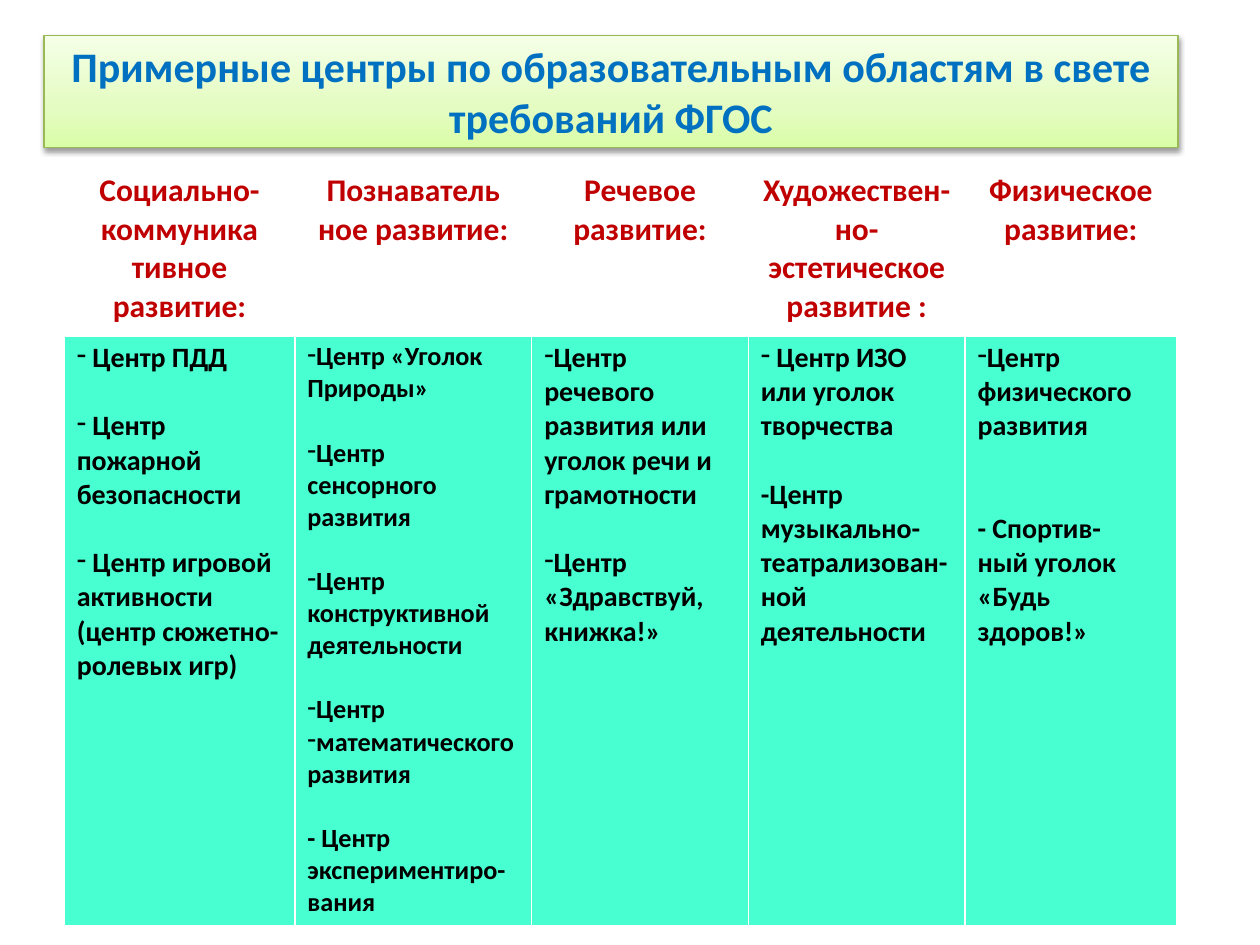
"""Build a slide listing activity centres for five educational areas."""

import dataclasses
from typing import Any

import lxml.etree
import pptx
import pptx.dml.color
import pptx.enum.shapes
import pptx.enum.text
import pptx.oxml.ns
import pptx.util

COLOURS = {
    "title": "0070C0",
    "heading": "C00000",
    "body": "000000",
    "cell": "47FFD1",
    "rule": "FFFFFF",
    "banner_line": "98B955",
    "shadow": "000000",
}
BANNER_STOPS = ((0, "DAFDA7"), (35, "E4FCC2"), (100, "F5FFE7"))
TITLE = "Примерные центры по образовательным областям в свете требований ФГОС"
FONT = "Calibri"
LINE_HEIGHT = 1.22
HEADING_SIZE = 18
ROW_HEIGHTS = (96.5, 336)


@dataclasses.dataclass(frozen=True)
class Item:
    text: str
    lines_before: int = 0
    dash: bool = True


@dataclasses.dataclass(frozen=True)
class Area:
    width: float
    heading: tuple[str, ...]
    items: tuple[Item, ...]
    size: int = 16


AREAS = (
    Area(131.76, ("Социально-коммуника", "тивное развитие:"), (
        Item(" Центр ПДД"),
        Item(" Центр пожарной безопасности", 1),
        Item(" Центр игровой активности (центр сюжетно-ролевых игр)", 1),
    )),
    Area(135.36, ("Познаватель", "ное развитие:"), (
        Item("Центр «Уголок Природы»"),
        Item("Центр сенсорного развития", 1),
        Item("Центр конструктивной деятельности", 1),
        Item("Центр", 1),
        Item("математического развития"),
        Item("- Центр экспериментиро-вания", 1, False),
    ), 15),
    Area(123.84, ("Речевое развитие:",), (
        Item("Центр речевого развития или уголок речи и грамотности"),
        Item("Центр «Здравствуй, книжка!»", 1),
    )),
    Area(123.84, ("Художествен-но-эстетическое развитие :",), (
        Item(" Центр ИЗО или уголок творчества"),
        Item("-Центр музыкально-театрализован-ной деятельности", 1, False),
    )),
    Area(120.96, ("Физическое развитие:",), (
        Item("Центр физического развития"),
        Item("- Спортив-", 2, False),
        Item("ный уголок «Будь здоров!»", 0, False),
    )),
)


def apply_format(target: Any, values: dict[str, Any]) -> None:
    """Set every named attribute on the target."""
    for name, value in values.items():
        setattr(target, name, value)


def rgb(name: str) -> pptx.dml.color.RGBColor:
    """Return a palette colour."""
    return pptx.dml.color.RGBColor.from_string(COLOURS[name])


def add_node(parent: Any, tag: str, **attributes: Any) -> Any:
    """Append a DrawingML element."""
    values = {key: str(value) for key, value in attributes.items()}
    return lxml.etree.SubElement(parent, pptx.oxml.ns.qn(f"a:{tag}"), values)


def write_items(frame: Any, items: tuple[Item, ...], size: int, colour: str,
                centred: bool = False) -> None:
    """Write one bold paragraph for each item."""
    for index, item in enumerate(items):
        para = frame.add_paragraph() if index else frame.paragraphs[0]
        align = pptx.enum.text.PP_ALIGN
        gap = item.lines_before * size * LINE_HEIGHT
        apply_format(para, {
            "alignment": align.CENTER if centred else align.LEFT,
            "space_before": pptx.util.Pt(gap),
        })
        if item.dash:
            properties = para._p.get_or_add_pPr()
            properties.set("marL", "0")
            properties.set("indent", "0")
            add_node(properties, "buFontTx")
            add_node(properties, "buChar", char="-")
        span = para.add_run()
        span.text = item.text
        apply_format(span.font, {"name": FONT, "size": pptx.util.Pt(size), "bold": True})
        span.font.color.rgb = rgb(colour)


def draw_banner(page: Any) -> None:
    """Draw the title on a gradient box with a soft shadow."""
    box = page.shapes.add_shape(
        pptx.enum.shapes.MSO_SHAPE.RECTANGLE,
        *(pptx.util.Pt(length) for length in (25.2, 20.16, 648, 64.08)))
    box.fill.gradient()
    box.fill.gradient_angle = 90
    stops = box._element.spPr.find(".//" + pptx.oxml.ns.qn("a:gsLst"))
    for stop in list(stops):
        stops.remove(stop)
    for position, colour in BANNER_STOPS:
        add_node(add_node(stops, "gs", pos=position * 1000), "srgbClr", val=colour)
    box.line.color.rgb = rgb("banner_line")
    box.line.width = pptx.util.Pt(0.75)
    box.shadow.inherit = False
    effects = box._element.spPr.find(pptx.oxml.ns.qn("a:effectLst"))
    shadow = add_node(effects, "outerShdw", blurRad=pptx.util.Pt(3.1),
                      dist=pptx.util.Pt(1.6), dir=5400000, rotWithShape=0)
    add_node(add_node(shadow, "srgbClr", val=COLOURS["shadow"]), "alpha", val=38000)
    apply_format(box.text_frame, {
        "word_wrap": True,
        "vertical_anchor": pptx.enum.text.MSO_ANCHOR.MIDDLE,
    })
    write_items(box.text_frame, (Item(TITLE, dash=False),), 24, "title", True)


def draw_borders(cell: Any, widths: dict[str, int]) -> None:
    """Draw the white rules around a cell."""
    properties = cell._tc.get_or_add_tcPr()
    for side, width in widths.items():
        line = add_node(properties, f"ln{side}", w=pptx.util.Pt(width))
        add_node(add_node(line, "solidFill"), "srgbClr", val=COLOURS["rule"])


def draw_table(page: Any) -> None:
    """Draw one column for each educational area."""
    frame = page.shapes.add_table(
        len(ROW_HEIGHTS), len(AREAS), pptx.util.Pt(36.72), pptx.util.Pt(94.6),
        pptx.util.Pt(sum(area.width for area in AREAS)),
        pptx.util.Pt(sum(ROW_HEIGHTS)))
    table = frame.table
    table.horz_banding = False
    for row, height in zip(table.rows, ROW_HEIGHTS):
        row.height = pptx.util.Pt(height)
    for index, area in enumerate(AREAS):
        table.columns[index].width = pptx.util.Pt(area.width)
        heading, body = table.cell(0, index), table.cell(1, index)
        draw_borders(heading, {"L": 1, "R": 1, "T": 1, "B": 3})
        draw_borders(body, {"L": 1, "R": 1, "T": 3, "B": 1})
        heading.fill.background()
        body.fill.solid()
        body.fill.fore_color.rgb = rgb("cell")
        lines = tuple(Item(text, dash=False) for text in area.heading)
        write_items(heading.text_frame, lines, HEADING_SIZE, "heading", True)
        write_items(body.text_frame, area.items, area.size, "body")


def main() -> None:
    """Create and save the deck."""
    deck = pptx.Presentation()
    apply_format(deck, {
        "slide_width": pptx.util.Pt(720),
        "slide_height": pptx.util.Pt(540),
    })
    page = deck.slides.add_slide(deck.slide_layouts[6])
    draw_banner(page)
    draw_table(page)
    deck.save("out.pptx")


if __name__ == "__main__":
    main()
